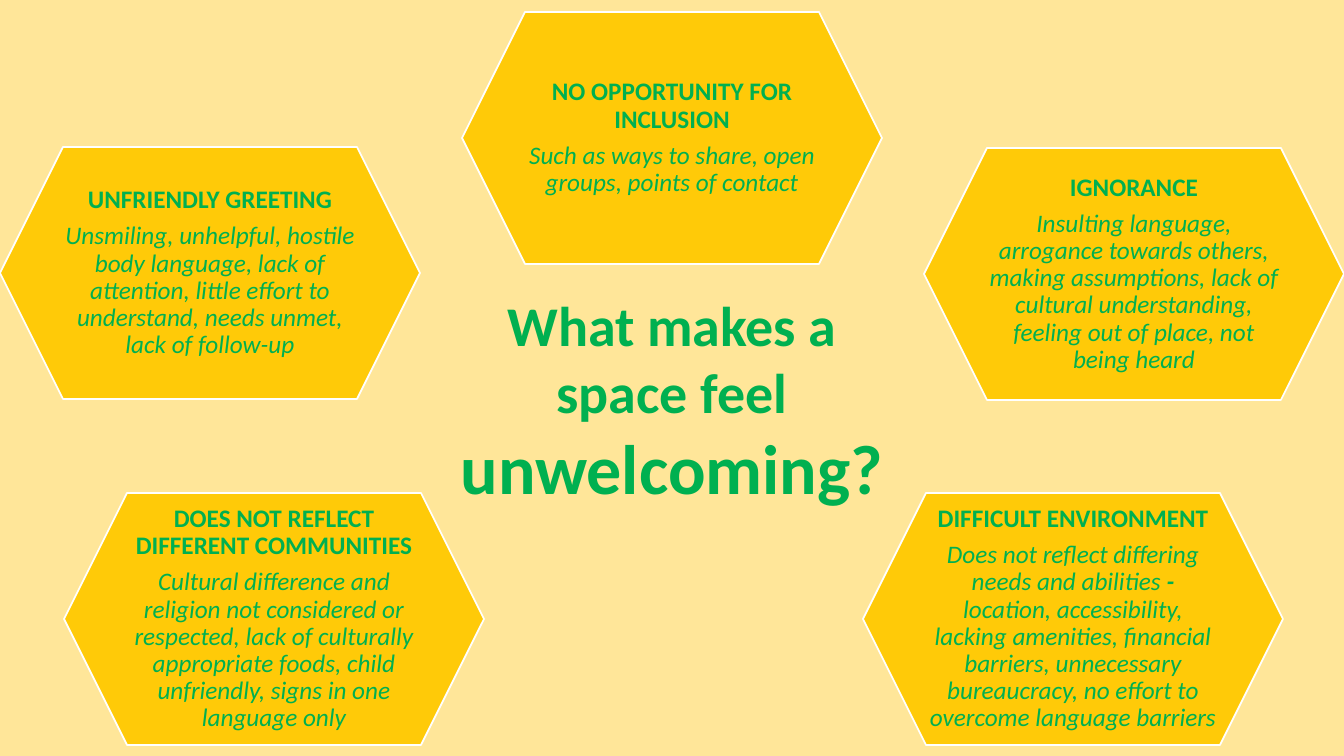
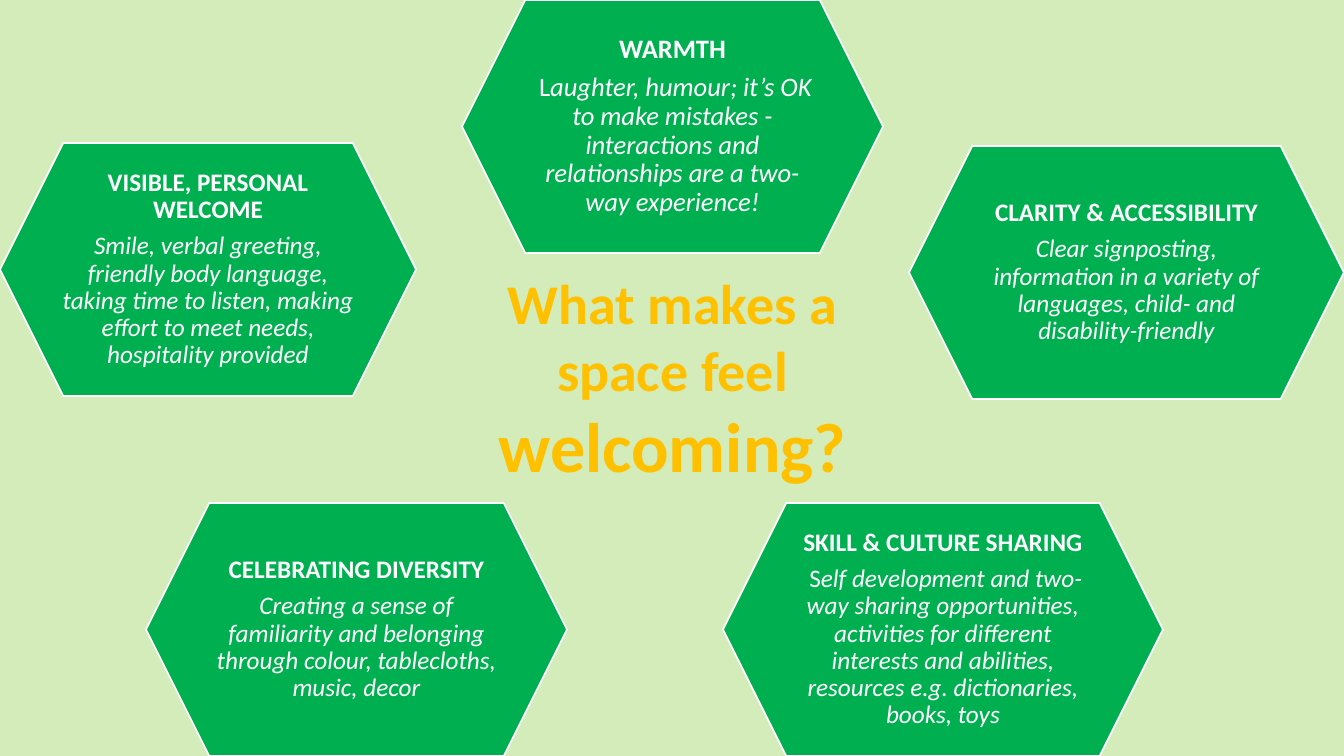
"""Build two slides on what makes a space feel unwelcoming or welcoming."""
from dataclasses import dataclass

from pptx import Presentation
from pptx.dml.color import RGBColor
from pptx.enum.shapes import MSO_SHAPE
from pptx.enum.text import MSO_ANCHOR, MSO_AUTO_SIZE, PP_ALIGN
from pptx.util import Emu, Pt

HEXAGON = MSO_SHAPE.HEXAGON
CENTER = PP_ALIGN.CENTER
TOP, MIDDLE = MSO_ANCHOR.TOP, MSO_ANCHOR.MIDDLE
NO_FIT = MSO_AUTO_SIZE.NONE
WIDE, HIGH = 1344, 756
SCALE = 12192000 / WIDE


@dataclass
class Theme:
    font: str = "Calibri"
    green: str = "00B050"
    gold: str = "FFC000"
    amber: str = "FFCA08"
    white: str = "FFFFFF"
    cream: str = "FFE699"
    mint: str = "D3ECB9"
    title: int = 40
    key: int = 50
    text: int = 18
    large: int = 19


theme = Theme()


def px(*sizes):
    return [Emu(round(size * SCALE)) for size in sizes]


def style(para, size, color, bold=False, italic=False):
    para.alignment = CENTER
    para.font.name = theme.font
    para.font.size = Pt(size)
    para.font.color.rgb = RGBColor.from_string(color)
    para.font.bold = bold
    para.font.italic = italic


slides = [
    {
        "back": theme.cream, "fill": theme.amber, "ink": theme.green,
        "accent": theme.green, "key": "unwelcoming?",
        "title": (446, 285, 452, 231), "high": 252,
        "cards": [
            (0, 147, 420, theme.text, "UNFRIENDLY GREETING",
             [("Unsmiling, unhelpful, hostile body language, lack of attention, "
               "little effort to understand, needs unmet, lack of follow-up", "")]),
            (924, 148, 420, theme.text, "IGNORANCE",
             [("Insulting language, arrogance towards others, making assumptions, "
               "lack of cultural understanding, feeling out of place, not being heard", "")]),
            (462, 12, 420, theme.text, "NO OPPORTUNITY FOR INCLUSION",
             [("Such as ways to share, open groups, points of contact", "")]),
            (64, 493, 420, theme.text, "DOES NOT REFLECT DIFFERENT COMMUNITIES",
             [("Cultural difference and religion not considered or respected, lack of "
               "culturally appropriate foods, child unfriendly, signs in one language only", "")]),
            (863, 493, 420, theme.text, "DIFFICULT ENVIRONMENT",
             [("Does not reflect differing needs and abilities ", ""), ("- ", "bold"),
              ("location, accessibility, lacking amenities, financial barriers, unnecessary "
               "bureaucracy, no effort to overcome language barriers", "")]),
        ],
    },
    {
        "back": theme.mint, "fill": theme.green, "ink": theme.white,
        "accent": theme.gold, "key": "welcoming?",
        "title": (476, 263, 393, 231), "high": 253,
        "cards": [
            (0, 143, 416, theme.text, "VISIBLE, PERSONAL WELCOME",
             [("Smile, verbal greeting, friendly body language, taking time to listen, "
               "making effort to meet needs, hospitality provided", "")]),
            (462, 0, 421, theme.large, "WARMTH",
             [(" L", "plain"),
              ("aughter, humour; it’s OK to make mistakes - interactions and "
               "relationships are a two-way experience!", "")]),
            (146, 503, 421, theme.text, "CELEBRATING DIVERSITY",
             [("Creating a sense of familiarity and belonging through colour, "
               "tablecloths, music, decor", "")]),
            (909, 146, 435, theme.text, "CLARITY & ACCESSIBILITY",
             [("Clear signposting, information in a variety of languages, "
               "child- and disability-friendly", "")]),
            (723, 503, 440, theme.text, "SKILL & CULTURE SHARING",
             [(" S", "plain"),
              ("elf development and two-way sharing opportunities, activities for "
               "different interests and abilities, resources e.g. dictionaries, "
               "books, toys", "")]),
        ],
    },
]

deck = Presentation()
deck.slide_width, deck.slide_height = px(WIDE, HIGH)

for data in slides:
    slide = deck.slides.add_slide(deck.slide_layouts[5])
    slide.background.fill.solid()
    slide.background.fill.fore_color.rgb = RGBColor.from_string(data["back"])

    for left, top, wide, size, head, body in data["cards"]:
        high = data["high"]
        group = slide.shapes.add_group_shape()
        card = group.shapes.add_shape(HEXAGON, *px(left, top, wide, high))
        card.shadow.inherit = False
        card.fill.solid()
        card.fill.fore_color.rgb = RGBColor.from_string(data["fill"])
        card.line.color.rgb = RGBColor.from_string(theme.white)
        card.line.width = Pt(1.25)

        side, rise = round(wide * 0.133), 34
        box = group.shapes.add_textbox(
            *px(left + side, top + rise, wide - 2 * side, high - 2 * rise))
        frame = box.text_frame
        frame.word_wrap = True
        frame.auto_size = NO_FIT
        frame.vertical_anchor = MIDDLE
        (frame.margin_left, frame.margin_top,
         frame.margin_right, frame.margin_bottom) = px(7, 7, 7, 7)

        label = frame.paragraphs[0]
        label.text = head
        style(label, size, data["ink"], bold=True)
        detail = frame.add_paragraph()
        style(detail, size, data["ink"], italic=True)
        for words, mark in body:
            run = detail.add_run()
            run.text = words
            if mark == "bold":
                run.font.bold = True
            elif mark == "plain":
                run.font.italic = False
        for para in (label, detail):
            para.line_spacing = 0.9
            para.space_after = Pt(size * 0.35)

    title = slide.shapes.title
    title.left, title.top, title.width, title.height = px(*data["title"])
    frame = title.text_frame
    frame.word_wrap = True
    frame.auto_size = NO_FIT
    frame.vertical_anchor = TOP
    para = frame.paragraphs[0]
    style(para, theme.title, data["accent"], bold=True)
    para.add_run().text = "What makes a space feel "
    key = para.add_run()
    key.text = data["key"]
    key.font.size = Pt(theme.key)

deck.save("out.pptx")
